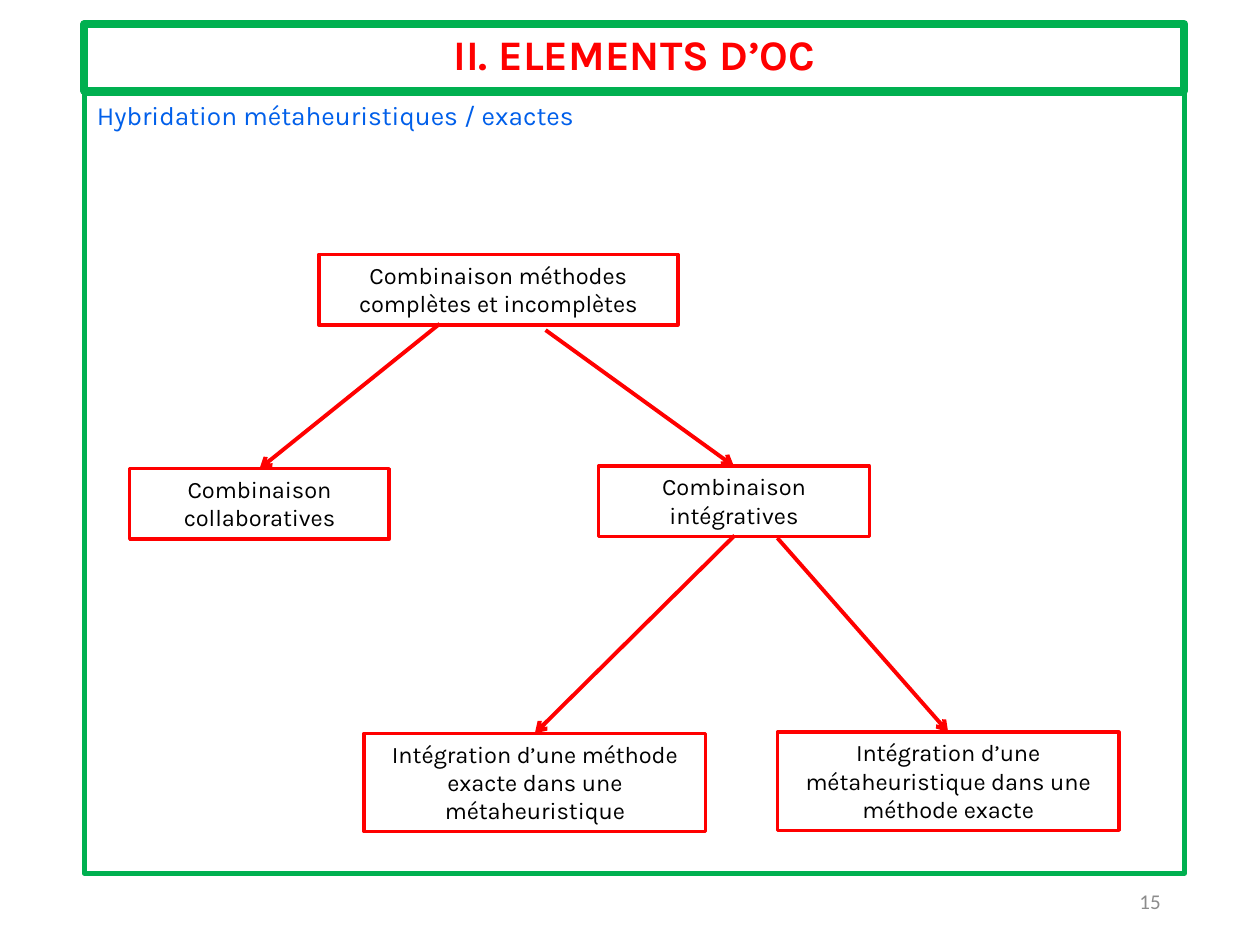
from lxml.etree import SubElement
from pptx import Presentation
from pptx.dml.color import RGBColor
from pptx.enum.shapes import MSO_CONNECTOR, MSO_SHAPE
from pptx.enum.text import MSO_ANCHOR, PP_ALIGN
from pptx.oxml.ns import qn
from pptx.util import Inches, Pt

GREEN = RGBColor(0x00, 0xB0, 0x50)
RED = RGBColor(0xFF, 0x00, 0x00)
BLUE = RGBColor(0x00, 0x5F, 0xEA)
BLACK = RGBColor(0x00, 0x00, 0x00)
GRAY = RGBColor(0x8C, 0x8C, 0x8C)

TITLE = "II. ELEMENTS D’OC"
TOPIC = "Hybridation métaheuristiques / exactes"
PAGE = "15"

# name: (text, (left, top, width, height))
NODES = {
    "root": ("Combinaison méthodes complètes et incomplètes", (2.53, 2.02, 2.85, 0.56)),
    "collab": ("Combinaison collaboratives", (1.03, 3.72, 2.06, 0.56)),
    "integ": ("Combinaison intégratives", (4.75, 3.7, 2.15, 0.56)),
    "exact": ("Intégration d’une méthode exacte dans une métaheuristique",
              (2.89, 5.82, 2.71, 0.78)),
    "meta": ("Intégration d’une métaheuristique dans une méthode exacte",
             (6.17, 5.81, 2.71, 0.78)),
}
# (start point, child reached at the middle of its top edge)
LINKS = [
    ((3.49, 2.57), "collab"),
    ((5.83, 4.25), "exact"),
    ((4.33, 2.62), "integ"),
    ((6.17, 4.27), "meta"),
]

HEAD = {"size": Pt(24), "bold": True, "name": "Karla"}
BODY = {"size": Pt(15), "name": "Karla"}
LABEL = {"size": Pt(13.5), "name": "Karla"}
FOOT = {"size": Pt(12), "name": "Calibri"}
TIGHT = {"margin_left": Inches(0.07), "margin_right": Inches(0.07),
         "margin_top": Inches(0.04), "margin_bottom": Inches(0.04)}


def assign(item, values):
    for key, value in values.items():
        setattr(item, key, value)


def write(shape, text, font, color, align, anchor=MSO_ANCHOR.TOP):
    frame = shape.text_frame
    assign(frame, {"word_wrap": True, "vertical_anchor": anchor})
    para = frame.paragraphs[0]
    para.alignment = align
    run = para.add_run()
    run.text = text
    assign(run.font, font)
    run.font.color.rgb = color


def add_box(slide, place, color, width):
    box = slide.shapes.add_shape(MSO_SHAPE.RECTANGLE, *map(Inches, place))
    box.shadow.inherit = False
    box.fill.background()
    box.line.color.rgb = color
    box.line.width = Pt(width)
    return box


def add_arrow(slide, start, end):
    link = slide.shapes.add_connector(
        MSO_CONNECTOR.STRAIGHT, *map(Inches, (*start, *end)))
    link.line.color.rgb = RED
    link.line.width = Pt(2.25)
    SubElement(link.line._get_or_add_ln(), qn("a:tailEnd"), type="arrow")
    SubElement(link._element.spPr, qn("a:effectLst"))


def main():
    deck = Presentation()
    assign(deck, {"slide_width": Inches(10), "slide_height": Inches(7.5)})
    slide = deck.slides.add_slide(deck.slide_layouts[6])

    title = add_box(slide, (0.67, 0.19, 8.73, 0.53), GREEN, 4.5)
    assign(title.text_frame, TIGHT)
    write(title, TITLE, HEAD, RED, PP_ALIGN.CENTER)
    panel = add_box(slide, (0.67, 0.74, 8.73, 6.19), GREEN, 3)
    write(panel, TOPIC, BODY, BLUE, PP_ALIGN.LEFT)
    page = slide.shapes.add_textbox(*map(Inches, (7.06, 6.95, 2.25, 0.4)))
    write(page, PAGE, FOOT, GRAY, PP_ALIGN.RIGHT, MSO_ANCHOR.MIDDLE)

    for text, place in NODES.values():
        node = add_box(slide, place, RED, 2)
        write(node, text, LABEL, BLACK, PP_ALIGN.CENTER)
    for start, child in LINKS:
        left, top, width, _ = NODES[child][1]
        add_arrow(slide, start, (left + width / 2, top))

    deck.save("out.pptx")


if __name__ == "__main__":
    main()
